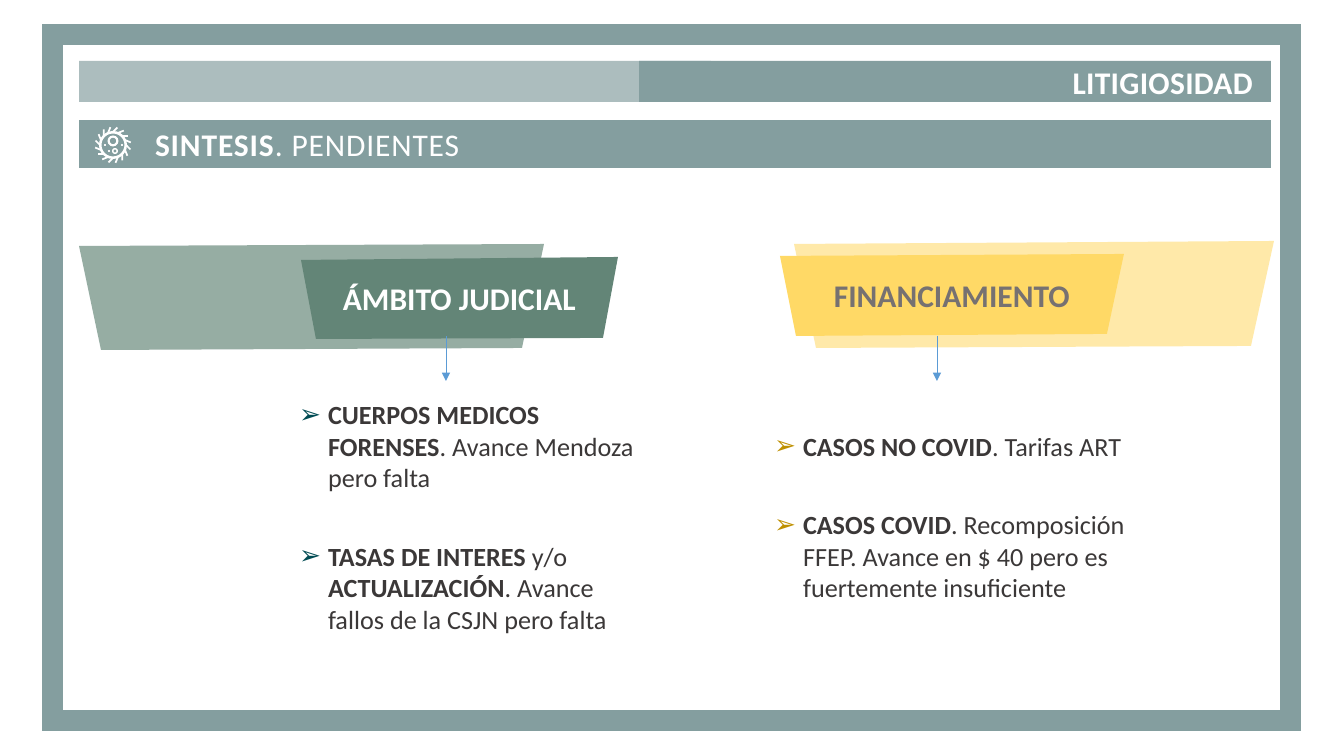
import math

import pptx
import pptx.dml.color
import pptx.enum.shapes
import pptx.enum.text
import pptx.oxml.ns
import pptx.util
from lxml import etree

PX = 914400 / 100.8  # EMU in one px
RGBColor = pptx.dml.color.RGBColor
MSO_SHAPE = pptx.enum.shapes.MSO_SHAPE
PP_ALIGN = pptx.enum.text.PP_ALIGN
qn = pptx.oxml.ns.qn

TEAL = RGBColor(0x84, 0x9E, 0x9F)
GREEN = RGBColor(0x63, 0x85, 0x77)
YELLOW = RGBColor(0xFF, 0xD9, 0x66)
BLUE = RGBColor(0x5B, 0x9B, 0xD5)
WHITE = RGBColor(0xFF, 0xFF, 0xFF)
GREY = RGBColor(0x76, 0x71, 0x71)
DARK = RGBColor(0x3B, 0x38, 0x38)
PETROL = RGBColor(0x00, 0x4B, 0x53)
OCHRE = RGBColor(0xBF, 0x90, 0x00)


def paint(shape, colour, opacity=100):
    shape.shadow.inherit = False
    shape.line.fill.background()
    shape.fill.solid()
    shape.fill.fore_color.rgb = colour
    if opacity < 100:
        colour_element = shape._element.spPr.find(qn("a:solidFill"))[0]
        etree.SubElement(colour_element, qn("a:alpha"), val=str(opacity * 1000))


def write(text_frame, paragraphs, size, colour, alignment, insets=(0, 0)):
    """Each paragraph is a list of runs: (text, bold, tracking in 1/100 pt)."""
    text_frame.word_wrap = True
    text_frame.auto_size = pptx.enum.text.MSO_AUTO_SIZE.NONE
    text_frame.vertical_anchor = pptx.enum.text.MSO_ANCHOR.MIDDLE
    text_frame.margin_left, text_frame.margin_right = (int(inset * PX) for inset in insets)
    text_frame.margin_top = text_frame.margin_bottom = 0
    for index, runs in enumerate(paragraphs):
        paragraph = text_frame.add_paragraph() if index else text_frame.paragraphs[0]
        paragraph.alignment = alignment
        for text, bold, tracking in runs:
            run = paragraph.add_run()
            run.text = text
            run.font.name = "Calibri"
            run.font.size = pptx.util.Pt(size)
            run.font.bold = bold
            run.font.color.rgb = colour
            run._r.get_or_add_rPr().set("spc", str(tracking))


presentation = pptx.Presentation()
presentation.slide_width = int(1344 * PX)
presentation.slide_height = int(756 * PX)
slide = presentation.slides.add_slide(presentation.slide_layouts[3])
shapes = slide.shapes

# Title bar
title = shapes.title
title.left, title.top, title.width, title.height = (int(v * PX) for v in (79, 120, 1192, 48))
paint(title, TEAL)
write(title.text_frame, [[("SINTESIS", True, 60), (". PENDIENTES", False, 60)]],
      22.5, WHITE, PP_ALIGN.LEFT, (76, 0))
title.text_frame.paragraphs[0].space_before = pptx.util.Pt(1)

# Ribbons: corners, colour, opacity, label, label colour
ribbons = [
    ([(1274, 241), (794, 244), (816, 348), (1251, 346)], YELLOW, 56, None, None),
    ([(544, 244), (79, 246), (101, 350), (522, 348)], GREEN, 67, None, None),
    ([(618, 257), (301, 260), (316, 339), (603, 338)], GREEN, 100, "ÁMBITO JUDICIAL", WHITE),
    ([(1124, 254), (780, 256), (796, 336), (1107, 334)], YELLOW, 100, "FINANCIAMIENTO", GREY),
]
for corners, colour, opacity, label, label_colour in ribbons:
    builder = shapes.build_freeform(*corners[0], scale=PX)
    builder.add_line_segments(corners[1:], close=True)
    ribbon = builder.convert_to_shape()
    paint(ribbon, colour, opacity)
    if label:
        write(ribbon.text_frame, [[(label, True, 0)]], 22.5, label_colour,
              PP_ALIGN.CENTER, (9, 9))

# Frame
frame = shapes.add_shape(MSO_SHAPE.RECTANGLE, *(int(v * PX) for v in (53, 35, 1238, 686)))
frame.shadow.inherit = False
frame.fill.background()
frame.line.color.rgb = TEAL
frame.line.width = pptx.util.Pt(15)
etree.SubElement(frame._element.spPr.find(qn("a:ln")), qn("a:miter"), lim="800000")

# Header bars
for left, opacity, label in [(79, 67, None), (639, 100, "LITIGIOSIDAD")]:
    bar = shapes.add_shape(MSO_SHAPE.RECTANGLE, *(int(v * PX) for v in (left, 61, 632, 41)))
    paint(bar, TEAL, opacity)
    if label:
        write(bar.text_frame, [[(label, True, 20)]], 22.5, WHITE, PP_ALIGN.RIGHT, (0, 18))
        bar.text_frame.paragraphs[0].space_before = pptx.util.Pt(1)

# Virus icon: centre, diameter and ring thickness (share of the diameter)
VIRUS_X, VIRUS_Y = 113, 145
virus_parts = [
    (VIRUS_X, VIRUS_Y, 28, 0.09), (113, 141, 11, 0.2), (115, 151, 6, 0.25),
    (105, 145, 2, None), (109, 151, 2, None), (122, 145, 2, None),
]
for x, y, diameter, thickness in virus_parts:
    kind = MSO_SHAPE.DONUT if thickness else MSO_SHAPE.OVAL
    part = shapes.add_shape(kind, int((x - diameter / 2) * PX), int((y - diameter / 2) * PX),
                            int(diameter * PX), int(diameter * PX))
    if thickness:
        part.adjustments[0] = thickness
    paint(part, WHITE)

# Lines: the two arrows and the spikes of the virus
lines = [(x, 336, x, 381, BLUE, 0.5, True) for x in (446, 937)]
SPIKES = 16
for index in range(SPIKES):
    angle = 2 * math.pi * index / SPIKES
    tip = angle + 0.25
    lines.append((VIRUS_X + 13 * math.cos(angle), VIRUS_Y + 13 * math.sin(angle),
                  VIRUS_X + 18 * math.cos(tip), VIRUS_Y + 18 * math.sin(tip),
                  WHITE, 1.25, False))
for x1, y1, x2, y2, colour, width, arrow in lines:
    line = shapes.add_connector(pptx.enum.shapes.MSO_CONNECTOR.STRAIGHT,
                                *(int(v * PX) for v in (x1, y1, x2, y2)))
    line.line.color.rgb = colour
    line.line.width = pptx.util.Pt(width)
    properties = line._element.spPr
    if arrow:
        etree.SubElement(properties.find(qn("a:ln")), qn("a:tailEnd"), type="triangle")
    etree.SubElement(properties, qn("a:effectLst"))

# Lists: placeholder, box, text margin, bullet colour, paragraphs
lists = [
    (1, (270, 397, 379, 239), 58, PETROL, [
        [("CUERPOS MEDICOS FORENSES", True, 0), (". Avance Mendoza pero falta", False, 0)],
        [("TASAS DE INTERES", True, 0), (" y/o ", False, 0), ("ACTUALIZACIÓN", True, 0),
         (". Avance fallos de la CSJN pero falta", False, 0)],
    ]),
    (2, (774, 429, 355, 175), 29, OCHRE, [
        [("CASOS NO COVID", True, 0), (". Tarifas ART", False, 0)],
        [("CASOS COVID", True, 0),
         (". Recomposición FFEP. Avance en $ 40 pero es fuertemente insuficiente", False, 0)],
    ]),
]
for number, box, margin, bullet_colour, paragraphs in lists:
    body = slide.placeholders[number]
    body.left, body.top, body.width, body.height = (int(v * PX) for v in box)
    write(body.text_frame, paragraphs, 18.7, DARK, PP_ALIGN.LEFT)
    for paragraph in body.text_frame.paragraphs:
        paragraph.space_before = paragraph.space_after = pptx.util.Pt(16.9)
        properties = paragraph._p.get_or_add_pPr()
        properties.set("marL", str(int(margin * PX)))
        properties.set("indent", str(int(-29 * PX)))
        bullet_fill = etree.SubElement(properties, qn("a:buClr"))
        etree.SubElement(bullet_fill, qn("a:srgbClr"), val=str(bullet_colour))
        etree.SubElement(properties, qn("a:buFont"), typeface="Calibri")
        etree.SubElement(properties, qn("a:buChar"), char="➢")

presentation.save("out.pptx")
